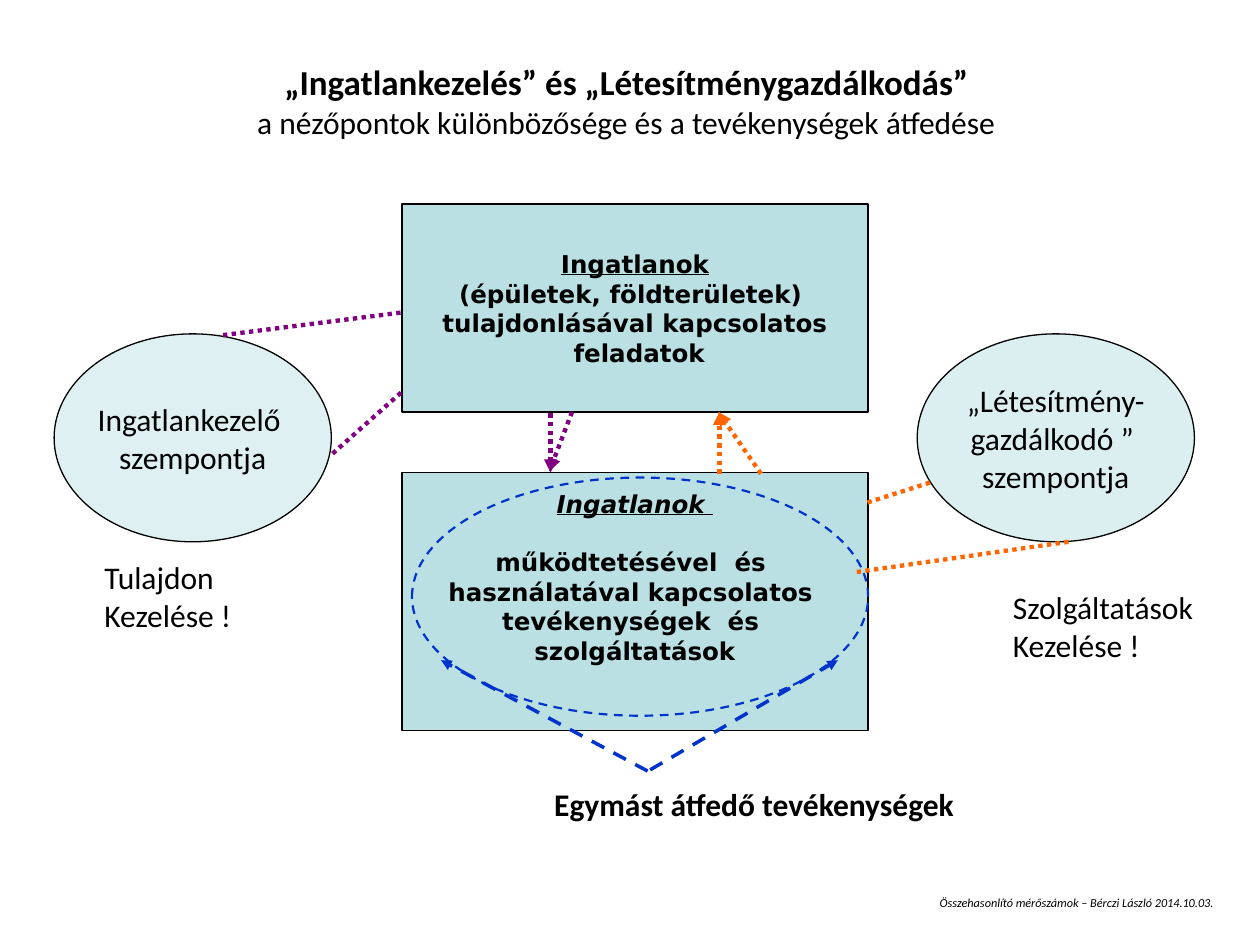
from dataclasses import dataclass

from lxml.etree import SubElement
from pptx import Presentation
from pptx.dml.color import RGBColor
from pptx.enum.dml import MSO_LINE
from pptx.enum.shapes import MSO_CONNECTOR, MSO_SHAPE
from pptx.enum.text import MSO_ANCHOR, MSO_AUTO_SIZE, PP_ALIGN
from pptx.oxml.ns import qn
from pptx.util import Inches, Pt


@dataclass(frozen=True)
class Theme:
    ink: str = "000000"
    box: str = "BBE0E3"
    owner: str = "800080"
    facility: str = "FF6600"
    overlap: str = "0033CC"
    font: str = "Calibri"
    box_font: str = "DejaVu Sans"
    title: int = 20
    body: int = 18
    task: int = 14
    footer: int = 7


THEME = Theme()


def write_text(sp, lines, size=THEME.body, font=THEME.font, bold=False, italic=False,
               align=PP_ALIGN.LEFT, anchor=MSO_ANCHOR.TOP, wrap=False):
    tf = sp.text_frame
    tf.word_wrap = wrap
    tf.vertical_anchor = anchor
    for i, line in enumerate(lines):
        p = tf.paragraphs[0] if i == 0 else tf.add_paragraph()
        p.alignment = align
        for text, override in [(line, {})] if isinstance(line, str) else line:
            if text == "\n":
                p.add_line_break()
                continue
            style = {"size": size, "bold": bold, "italic": italic, "underline": False, **override}
            r = p.add_run()
            r.text = text
            r.font.name = font
            r.font.size = Pt(style["size"])
            r.font.bold = style["bold"]
            r.font.italic = style["italic"]
            r.font.underline = style["underline"]
            r.font.color.rgb = RGBColor.from_string(THEME.ink)
    return tf


def add_label(s, box, lines, fit=True, **fmt):
    sp = s.shapes.add_textbox(*map(Inches, box))
    tf = write_text(sp, lines, **fmt)
    tf.auto_size = MSO_AUTO_SIZE.SHAPE_TO_FIT_TEXT if fit else MSO_AUTO_SIZE.NONE


def add_outline(s, kind, box, fill=None, opacity=100, line=THEME.ink, width=0.75, dash=None):
    sp = s.shapes.add_shape(kind, *map(Inches, box))
    sp.shadow.inherit = False
    sp.line.color.rgb = RGBColor.from_string(line)
    sp.line.width = Pt(width)
    if dash:
        sp.line.dash_style = dash
    if fill:
        sp.fill.solid()
        sp.fill.fore_color.rgb = RGBColor.from_string(fill)
        if opacity < 100:
            color = sp.fill._xPr.find(qn("a:solidFill"))[0]
            SubElement(color, qn("a:alpha"), val=str(opacity * 1000))
    else:
        sp.fill.background()
    return sp


def add_task_box(s, top, height, lines):
    sp = add_outline(s, MSO_SHAPE.RECTANGLE, (3.19, top, 3.7, height), THEME.box)
    return write_text(sp, lines, size=THEME.task, font=THEME.box_font, bold=True,
                      align=PP_ALIGN.CENTER, anchor=MSO_ANCHOR.MIDDLE)


def add_viewpoint(s, left, opacity, lines):
    sp = add_outline(s, MSO_SHAPE.OVAL, (left, 2.65, 2.2, 1.65), THEME.box, opacity)
    write_text(sp, lines, align=PP_ALIGN.CENTER, anchor=MSO_ANCHOR.MIDDLE)


def add_line(s, start, end, color, arrow=False, width=2.5, dash=MSO_LINE.ROUND_DOT):
    sp = s.shapes.add_connector(MSO_CONNECTOR.STRAIGHT, *map(Inches, start + end))
    sp.line.color.rgb = RGBColor.from_string(color)
    sp.line.width = Pt(width)
    sp.line.dash_style = dash
    if arrow:
        SubElement(sp.line._get_or_add_ln(), qn("a:tailEnd"), type="triangle")
    SubElement(sp._element.spPr, qn("a:effectLst"))


def main():
    prs = Presentation()
    prs.slide_width, prs.slide_height = Inches(10), Inches(7.5)
    s = prs.slides.add_slide(prs.slide_layouts[6])

    add_label(s, (0.75, 0.43, 8.5, 0.74), [[
        ("„Ingatlankezelés” és „Létesítménygazdálkodás”", {"size": THEME.title, "bold": True}),
        (" ", {}), ("\n", {}),
        ("a nézőpontok különbözősége és a tevékenységek átfedése ", {}),
    ]], fit=False, align=PP_ALIGN.CENTER, anchor=MSO_ANCHOR.MIDDLE, wrap=True)

    add_task_box(s, 1.62, 1.65, [
        [("Ingatlanok", {"underline": True})],
        "(épületek, földterületek) ", "tulajdonlásával kapcsolatos", " feladatok",
    ])
    tf = add_task_box(s, 3.75, 2.05, [
        [("Ingatlanok", {"underline": True, "italic": True}), (" ", {"underline": True})],
        "működtetésével  és ", "használatával kapcsolatos ", "tevékenységek  és ",
        "szolgáltatások",
    ])
    tf.paragraphs[1].space_before = Pt(16.5)
    tf.margin_bottom = Inches(0.44)

    add_viewpoint(s, 0.43, 48, ["Ingatlankezelő ", "szempontja"])
    add_viewpoint(s, 7.28, 51, ["„Létesítmény-", "gazdálkodó ” ", "szempontja"])

    for start, end, color, arrow in [
        ((1.77, 2.66), (3.19, 2.48), THEME.owner, False),
        ((2.64, 3.6), (3.19, 3.11), THEME.owner, False),
        ((4.54, 3.27), (4.36, 3.74), THEME.owner, True),
        ((4.37, 3.28), (4.37, 3.75), THEME.owner, True),
        ((7.38, 3.83), (6.88, 3.99), THEME.facility, False),
        ((8.48, 4.3), (6.8, 4.54), THEME.facility, False),
        ((6.04, 3.76), (5.7, 3.27), THEME.facility, True),
        ((5.71, 3.76), (5.71, 3.27), THEME.facility, True),
    ]:
        add_line(s, start, end, color, arrow)

    add_outline(s, MSO_SHAPE.OVAL, (3.27, 3.79, 3.62, 1.89),
                line=THEME.overlap, width=1.25, dash=MSO_LINE.DASH)
    add_label(s, (4.3, 6.18, 3.38, 0.4), ["Egymást átfedő tevékenységek"], bold=True)
    for start, end in [((5.14, 6.12), (3.5, 5.24)), ((5.16, 6.11), (6.65, 5.24))]:
        add_line(s, start, end, THEME.overlap, arrow=True, width=2, dash=MSO_LINE.DASH)

    add_label(s, (7.94, 4.62, 1.68, 0.7), ["Szolgáltatások", "Kezelése !"])
    add_label(s, (0.73, 4.38, 1.21, 0.7), ["Tulajdon", "Kezelése !"])
    add_label(s, (7.36, 7.06, 2.43, 0.22),
              ["Összehasonlító mérőszámok – Bérczi László 2014.10.03."],
              size=THEME.footer, italic=True, wrap=True)

    prs.save("out.pptx")


if __name__ == "__main__":
    main()
